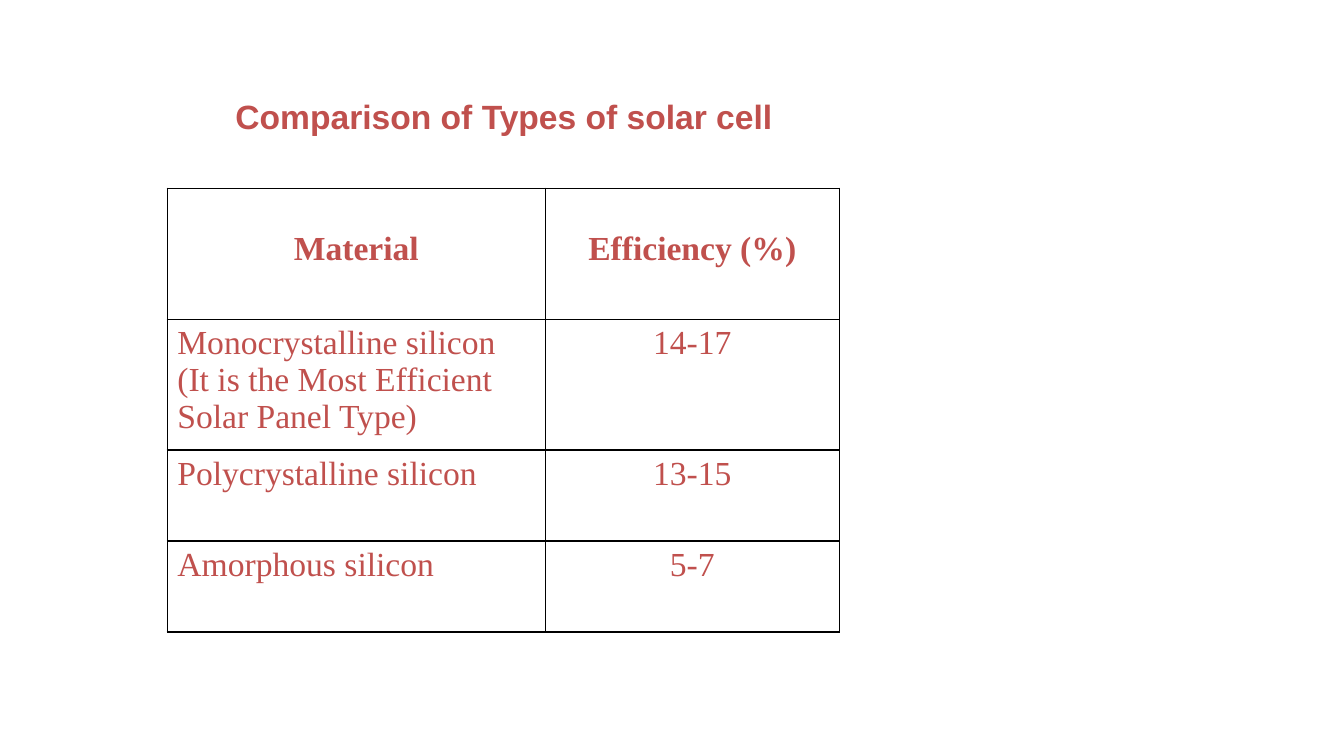
import pptx
import pptx.dml.color
import pptx.enum.text
import pptx.oxml
import pptx.oxml.ns
import pptx.util

Pt = pptx.util.Pt
ALIGN = pptx.enum.text.PP_ALIGN
ANCHOR = pptx.enum.text.MSO_ANCHOR

# Content
TITLE = "Comparison of Types of solar cell"
ROWS = [
    ("Material", "Efficiency (%)"),
    ("Monocrystalline silicon\n(It is the Most Efficient Solar Panel Type)", "14-17"),
    ("Polycrystalline silicon", "13-15"),
    ("Amorphous silicon", "5-7"),
]

# Layout and style
COLORS = {"text": "C0504D", "border": "000000"}
TITLE_BOX = (159, 65, 402, 36)
TABLE_LEFT, TABLE_TOP = 119.5, 134.5
COLUMN_WIDTHS = (270, 210)
ROW_HEIGHTS = (93.5, 93.5, 65, 65)
HEADER_MARGIN = 30


def write_text(frame, text, *, font="Times New Roman", size=24, bold=False,
               align=ALIGN.LEFT):
    frame.text = text
    for para in frame.paragraphs:
        para.alignment = align
        for span in para.runs:
            span.font.name = font
            span.font.size = Pt(size)
            span.font.bold = bold
            span.font.color.rgb = pptx.dml.color.RGBColor.from_string(COLORS["text"])


def add_borders(cell, width=1):
    properties = cell._tc.get_or_add_tcPr()
    for index, side in enumerate(("lnL", "lnR", "lnT", "lnB")):
        line = pptx.oxml.parse_xml(
            f'<a:{side} {pptx.oxml.ns.nsdecls("a")} w="{Pt(width)}"><a:solidFill>'
            f'<a:srgbClr val="{COLORS["border"]}"/></a:solidFill></a:{side}>')
        properties.insert(index, line)


deck = pptx.Presentation()
deck.slide_width, deck.slide_height = Pt(960), Pt(540)
page = deck.slides.add_slide(deck.slide_layouts[5])

# Title
title = page.shapes.title
title.left, title.top, title.width, title.height = map(Pt, TITLE_BOX)
write_text(title.text_frame, TITLE, font="Arial", bold=True, align=ALIGN.CENTER)
title.text_frame.word_wrap = False
title.text_frame.vertical_anchor = ANCHOR.MIDDLE

# Efficiency table
table = page.shapes.add_table(
    len(ROWS), len(COLUMN_WIDTHS), Pt(TABLE_LEFT), Pt(TABLE_TOP),
    Pt(sum(COLUMN_WIDTHS)), Pt(sum(ROW_HEIGHTS))).table
table.first_row = table.horz_banding = False
for column, width in zip(table.columns, COLUMN_WIDTHS):
    column.width = Pt(width)
for row_index, (texts, height) in enumerate(zip(ROWS, ROW_HEIGHTS)):
    table.rows[row_index].height = Pt(height)
    is_header = row_index == 0
    for column_index, text in enumerate(texts):
        cell = table.cell(row_index, column_index)
        cell.fill.background()
        cell.vertical_anchor = ANCHOR.TOP
        if is_header:
            cell.margin_top = Pt(HEADER_MARGIN)
        centred = is_header or column_index > 0
        write_text(cell.text_frame, text, bold=is_header,
                   align=ALIGN.CENTER if centred else ALIGN.LEFT)
        add_borders(cell)

deck.save("out.pptx")
